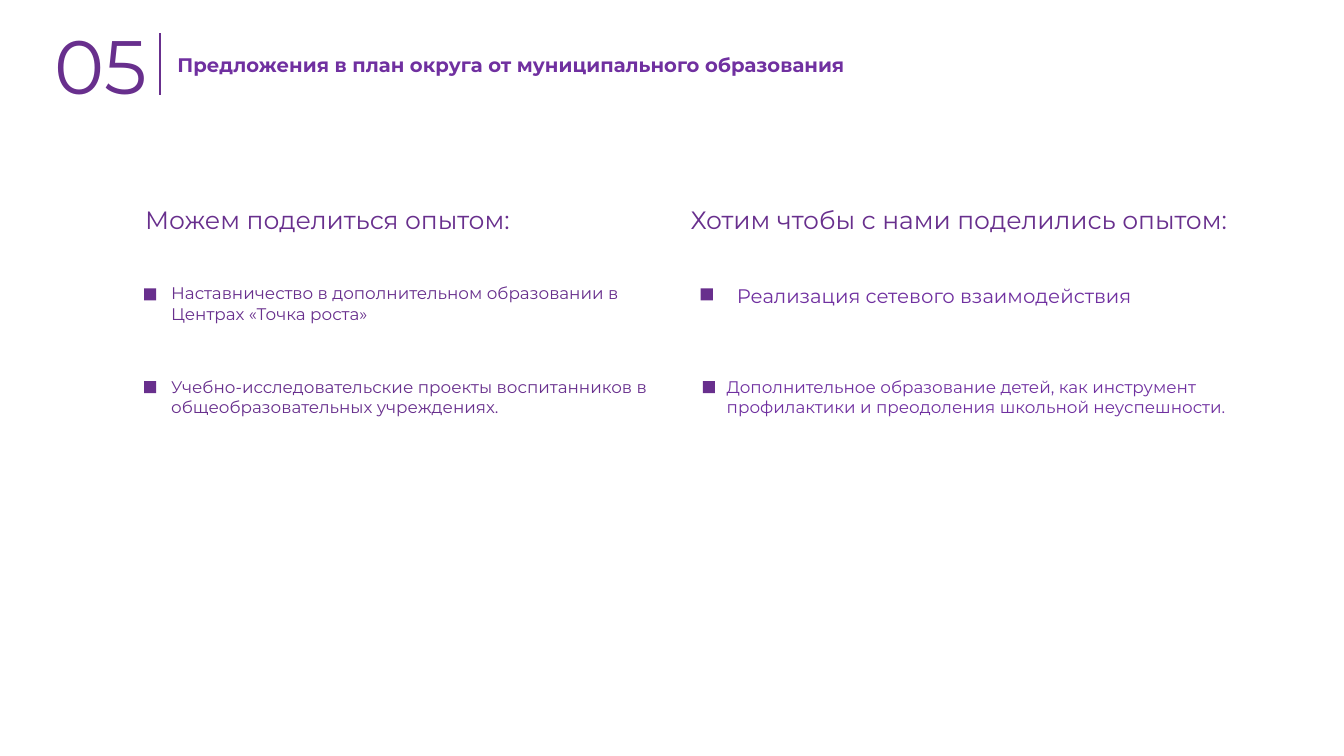
import pptx
import pptx.dml.color
import pptx.enum.shapes
import pptx.enum.text
import pptx.util
from lxml import etree
from pptx.util import Inches

PURPLE = "682F8D"
VIOLET = "7030A0"
MARKER_SIZE = 0.12
COLUMNS = [
    (1.43, 4.12, "Можем поделиться опытом:"),
    (6.84, 5.89, "Хотим чтобы с нами поделились опытом:"),
]
PROPOSALS = [
    (1.59, 2.76, 5.36, PURPLE, "Наставничество в дополнительном образовании в Центрах «Точка роста»"),
    (1.59, 3.69, 5.36, PURPLE, "Учебно-исследовательские проекты воспитанников в общеобразовательных учреждениях."),
    (7.1, 3.69, 5.54, VIOLET,
     "Дополнительное образование детей, как инструмент профилактики и преодоления школьной неуспешности."),
]
MARKERS = [(1.43, 2.86), (6.95, 2.86), (1.43, 3.78), (6.97, 3.78)]


def rgb(color):
    return pptx.dml.color.RGBColor.from_string(color)


def add_text(slide, text, left, top, width, height, size, color=PURPLE, bold=False,
             insets=(0, 0.01, 0, 0), indent=0.01, line_spacing=None):
    shape = slide.shapes.add_textbox(Inches(left), Inches(top), Inches(width), Inches(height))
    frame = shape.text_frame
    frame.word_wrap = True
    frame.auto_size = pptx.enum.text.MSO_AUTO_SIZE.SHAPE_TO_FIT_TEXT
    frame.margin_left, frame.margin_top, frame.margin_right, frame.margin_bottom = map(Inches, insets)
    paragraph = frame.paragraphs[0]
    paragraph.line_spacing = line_spacing
    properties = paragraph._p.get_or_add_pPr()
    properties.set("marL", str(Inches(indent)))
    properties.set("indent", "0")
    run = paragraph.add_run()
    run.text = text
    run.font.name = "Montserrat"
    run.font.size = pptx.util.Pt(size)
    run.font.bold = bold
    run.font.color.rgb = rgb(color)


def add_marker(slide, left, top):
    shape = slide.shapes.add_shape(
        pptx.enum.shapes.MSO_SHAPE.RECTANGLE,
        Inches(left), Inches(top), Inches(MARKER_SIZE), Inches(MARKER_SIZE))
    shape.shadow.inherit = False
    shape.fill.solid()
    shape.fill.fore_color.rgb = rgb(PURPLE)
    shape.line.fill.background()


def add_divider(slide, left, top, bottom):
    connector = slide.shapes.add_connector(
        pptx.enum.shapes.MSO_CONNECTOR.STRAIGHT,
        Inches(left), Inches(top), Inches(left), Inches(bottom))
    connector.line.color.rgb = rgb(PURPLE)
    connector.line.width = pptx.util.Pt(1.42)
    etree.SubElement(connector._element.spPr, pptx.oxml.ns.qn("a:effectLst"))


def main():
    presentation = pptx.Presentation()
    presentation.slide_width = Inches(13.33)
    presentation.slide_height = Inches(7.5)
    slide = presentation.slides.add_slide(presentation.slide_layouts[6])

    add_divider(slide, 1.59, 0.33, 0.94)
    add_text(slide, "05", 0.53, 0.18, 1.03, 0.92, size=54)
    add_text(slide, "Предложения в план округа от муниципального образования",
             1.76, 0.52, 8.67, 0.24, size=14, color=VIOLET, bold=True, indent=0)
    for left, width, heading in COLUMNS:
        add_text(slide, heading, left, 2.02, width, 0.31, size=17.9)
    for left, top in MARKERS:
        add_marker(slide, left, top)
    add_text(slide, "Реализация сетевого взаимодействия", 7.3, 2.77, 4.97, 0.26,
             size=14, color=VIOLET, line_spacing=1.15)
    for left, top, width, color, proposal in PROPOSALS:
        add_text(slide, proposal, left, top, width, 0.5, size=12, color=color,
                 insets=(0.1, 0.05, 0.1, 0.05))

    presentation.save("out.pptx")


if __name__ == "__main__":
    main()
